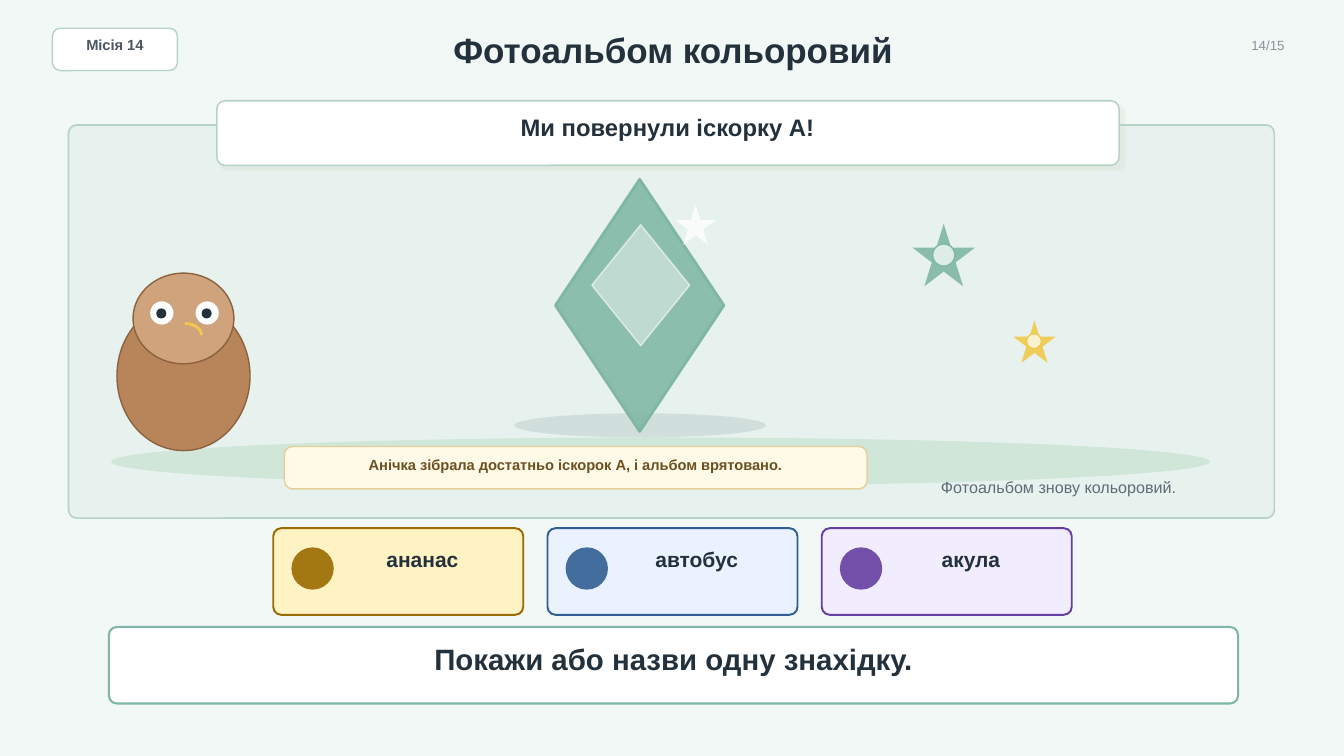
import pptx
import pptx.util
from pptx.dml.color import RGBColor
from pptx.enum.shapes import MSO_SHAPE
from pptx.enum.text import MSO_ANCHOR, PP_ALIGN
from pptx.oxml.ns import qn
from lxml import etree

PX = 9144  # EMU in one px, 100 px to the inch
RADIUS = 8
FONT = "Arial"

WHITE = RGBColor(0xFF, 0xFF, 0xFF)
PAGE = RGBColor(0xF2, 0xF8, 0xF5)
SCENE = RGBColor(0xE7, 0xF2, 0xEE)
EDGE = RGBColor(0xB7, 0xD3, 0xC7)
GREEN = RGBColor(0x7F, 0xB7, 0xA3)
GRASS = RGBColor(0xCF, 0xE6, 0xD7)
SHADE = RGBColor(0xC9, 0xD9, 0xD5)
INK = RGBColor(0x23, 0x31, 0x3D)
SLATE = RGBColor(0x4B, 0x55, 0x63)
GREY = RGBColor(0x8A, 0x92, 0x9A)
NOTE = RGBColor(0x5E, 0x6C, 0x78)
BODY = RGBColor(0xB8, 0x84, 0x5A)
HEAD = RGBColor(0xCF, 0xA4, 0x7C)
BROWN = RGBColor(0x8C, 0x62, 0x3E)
GOLD = RGBColor(0xF2, 0xC9, 0x4C)
CREAM = RGBColor(0xFF, 0xF9, 0xE8)
SAND = RGBColor(0xE4, 0xCF, 0x98)
UMBER = RGBColor(0x6B, 0x51, 0x20)
DUSK = RGBColor(0xC8, 0xC1, 0xB0)

CARDS = [
    ("ананас", RGBColor(0xFF, 0xF3, 0xC4), RGBColor(0x9A, 0x6B, 0x00)),
    ("автобус", RGBColor(0xEA, 0xF2, 0xFF), RGBColor(0x31, 0x5F, 0x93)),
    ("акула", RGBColor(0xF2, 0xEC, 0xFF), RGBColor(0x65, 0x40, 0xA0)),
]


def emu(*sizes):
    return [size * PX for size in sizes]


def set_alpha(color, share):
    etree.SubElement(color, qn("a:alpha"), val=str(share * 1000))


def add_form(slide, kind, box, fill=None, line=None, width=1, alpha=100,
             line_alpha=100):
    form = slide.shapes.add_shape(kind, *emu(*box))
    form.shadow.inherit = False
    props = form._element.spPr
    if fill is None:
        form.fill.background()
    else:
        form.fill.solid()
        form.fill.fore_color.rgb = fill
        if alpha < 100:
            set_alpha(props.find(qn("a:solidFill"))[0], alpha)
    if line is None:
        form.line.fill.background()
    else:
        form.line.color.rgb = line
        form.line.width = pptx.util.Pt(width)
        if line_alpha < 100:
            set_alpha(props.find(qn("a:ln")).find(qn("a:solidFill"))[0], line_alpha)
    return form


def add_oval(slide, box, fill, **style):
    return add_form(slide, MSO_SHAPE.OVAL, box, fill, **style)


def add_panel(slide, box, fill, line, width=1):
    panel = add_form(slide, MSO_SHAPE.ROUNDED_RECTANGLE, box, fill, line, width)
    panel.adjustments[0] = RADIUS / min(box[2:])
    return panel


def add_text(slide, box, text, size=15, color=INK, bold=True,
             align=PP_ALIGN.CENTER):
    frame = slide.shapes.add_textbox(*emu(*box)).text_frame
    frame.word_wrap = True
    frame.vertical_anchor = MSO_ANCHOR.MIDDLE
    frame.margin_left = frame.margin_right = 0
    frame.margin_top = frame.margin_bottom = 0
    para = frame.paragraphs[0]
    para.alignment = align
    run = para.add_run()
    run.text = text
    run.font.name = FONT
    run.font.size = pptx.util.Pt(size)
    run.font.bold = bold
    run.font.color.rgb = color


def add_shade(panel):
    effects = panel._element.spPr.find(qn("a:effectLst"))
    shade = etree.SubElement(
        effects, qn("a:outerShdw"), blurRad="12700", dist="50800",
        dir="2700000", algn="tl", rotWithShape="0")
    color = etree.SubElement(shade, qn("a:srgbClr"), val=str(DUSK))
    set_alpha(color, 16)


def add_owl(slide):
    add_oval(slide, (116, 299, 132, 148), BODY, line=BROWN)
    add_oval(slide, (132, 271, 100, 90), HEAD, line=BROWN)
    for left in (149, 194):
        add_oval(slide, (left, 299, 23, 23), WHITE)
        add_oval(slide, (left + 6, 306, 10, 10), INK)
    add_form(slide, MSO_SHAPE.ARC, (167, 321, 33, 23), line=GOLD, width=2)


def add_gem(slide):
    add_oval(slide, (510, 410, 250, 24), SHADE, alpha=75)
    add_form(slide, MSO_SHAPE.DIAMOND, (551, 178, 167, 250), GREEN,
             GREEN, 2, alpha=88)
    add_form(slide, MSO_SHAPE.DIAMOND, (587, 223, 97, 120), WHITE,
             WHITE, alpha=45, line_alpha=60)
    add_form(slide, MSO_SHAPE.STAR_5_POINT, (670, 203, 40, 40), WHITE, alpha=82)


def add_spark(slide, left, top, size, color):
    add_form(slide, MSO_SHAPE.STAR_5_POINT, (left, top, size, size), color,
             alpha=90)
    dot = round(size * 0.355)
    gap = (size - dot) // 2
    add_oval(slide, (left + gap, top + gap, dot, dot), WHITE, line=color, alpha=72)


def add_card(slide, left, word, fill, color):
    add_panel(slide, (left, 524, 248, 86), fill, color, 1.4)
    add_oval(slide, (left + 18, 543, 42, 42), color, alpha=90)
    add_text(slide, (left + 66, 538, 164, 34), word)


def main():
    deck = pptx.Presentation()
    deck.slide_width, deck.slide_height = emu(1333, 750)
    slide = deck.slides.add_slide(deck.slide_layouts[6])
    slide.background.fill.solid()
    slide.background.fill.fore_color.rgb = PAGE

    # Header
    add_panel(slide, (52, 28, 124, 42), WHITE, EDGE)
    add_text(slide, (62, 37, 104, 15), "Місія 14", size=10.5, color=SLATE)
    add_text(slide, (200, 25, 935, 48), "Фотоальбом кольоровий", size=25)
    add_text(slide, (1202, 37, 72, 16), "14/15", size=9.5, color=GREY,
             bold=False, align=PP_ALIGN.RIGHT)

    # Scene
    add_panel(slide, (68, 124, 1196, 390), SCENE, EDGE, 1.2)
    add_oval(slide, (110, 434, 1090, 48), GRASS, alpha=92)
    add_owl(slide)
    add_gem(slide)
    add_spark(slide, 905, 222, 62, GREEN)
    add_spark(slide, 1005, 318, 42, GOLD)

    # Banner and caption
    add_shade(add_panel(slide, (215, 100, 895, 64), WHITE, EDGE, 1.1))
    add_text(slide, (238, 113, 848, 26), "Ми повернули іскорку А!", size=17)
    add_panel(slide, (282, 443, 578, 42), CREAM, SAND)
    add_text(slide, (298, 452, 546, 18),
             "Анічка зібрала достатньо іскорок А, і альбом врятовано.",
             size=10.5, color=UMBER)

    # Task
    add_panel(slide, (108, 622, 1120, 76), WHITE, GREEN, 1.5)
    add_text(slide, (134, 639, 1068, 28), "Покажи або назви одну знахідку.",
             size=21)

    # Word cards
    for index, card in enumerate(CARDS):
        add_card(slide, 271 + 272 * index, *card)
    add_text(slide, (900, 472, 300, 22), "Фотоальбом знову кольоровий.",
             size=11.5, color=NOTE, bold=False)

    deck.save("out.pptx")


if __name__ == "__main__":
    main()
